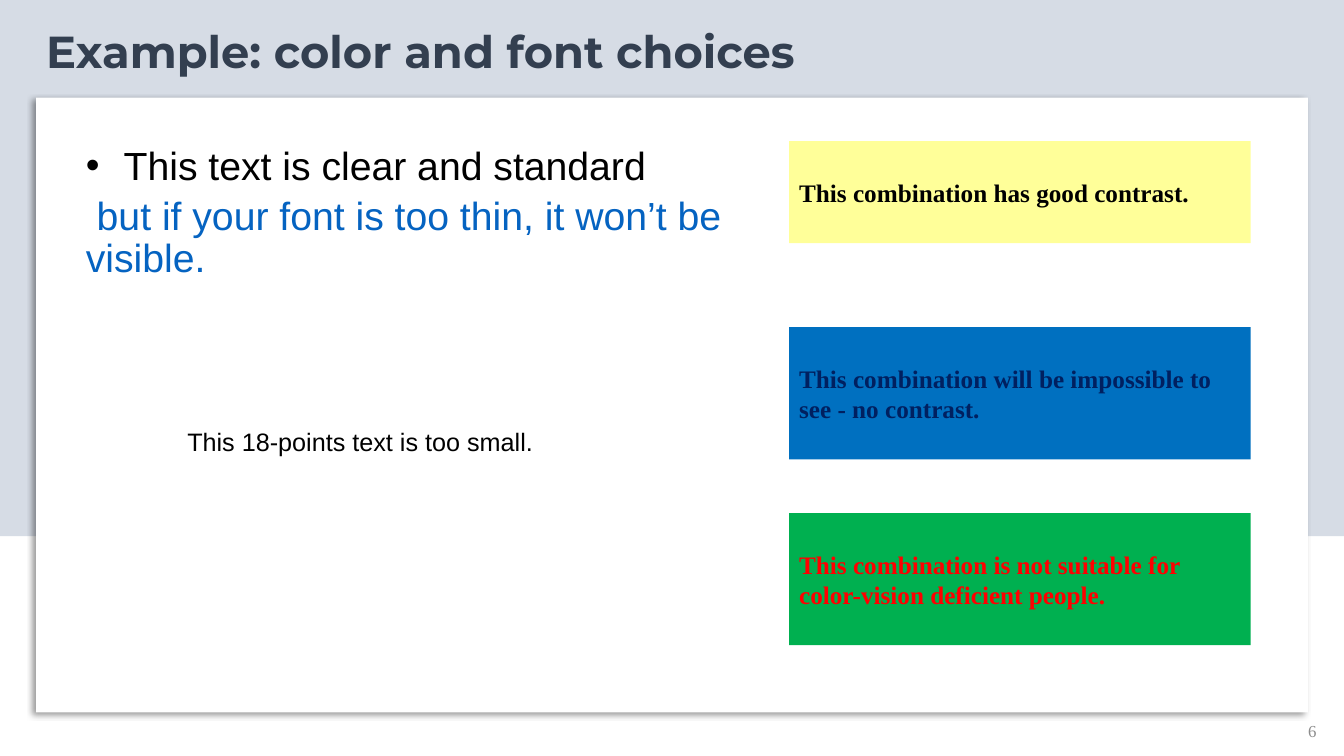
from lxml.etree import SubElement
from pptx import Presentation
from pptx.dml.color import RGBColor
from pptx.enum.shapes import MSO_SHAPE as Shape
from pptx.enum.text import MSO_ANCHOR as Anchor, MSO_AUTO_SIZE as Fit, PP_ALIGN as Align
from pptx.oxml.ns import qn
from pptx.util import Cm, Pt

WHITE = RGBColor(0xFF, 0xFF, 0xFF)
BLACK = RGBColor(0x00, 0x00, 0x00)
MIST = RGBColor(0xD6, 0xDC, 0xE5)
SLATE = RGBColor(0x33, 0x3F, 0x50)
GREY = RGBColor(0x8C, 0x8C, 0x8C)
LINK = RGBColor(0x05, 0x63, 0xC1)
YELLOW = RGBColor(0xFF, 0xFF, 0x99)
BLUE = RGBColor(0x00, 0x70, 0xC0)
NAVY = RGBColor(0x00, 0x20, 0x60)
GREEN = RGBColor(0x00, 0xB0, 0x50)
RED = RGBColor(0xFF, 0x00, 0x00)

SAMPLES = [
    ("This combination has good contrast.", YELLOW, BLACK, 2.57),
    ("This combination will be impossible to see - no contrast.", BLUE, NAVY, 3.33),
    ("This combination is not suitable for color-vision deficient people.", GREEN, RED, 3.33),
]


def style(item, looks):
    """Set each attribute in looks on the item."""
    for name, value in looks.items():
        setattr(item, name, value)


def place(item, box):
    """Move the item to a box given in centimetres."""
    style(item, dict(zip(("left", "top", "width", "height"), map(Cm, box))))


def write(para, text, color, looks):
    """Add a run of styled text to the paragraph."""
    run = para.add_run()
    run.text = text
    style(run.font, looks)
    run.font.color.rgb = color


def panel(slide, box, color):
    """Draw a plain filled rectangle."""
    rect = slide.shapes.add_shape(Shape.RECTANGLE, *map(Cm, box))
    rect.fill.solid()
    rect.fill.fore_color.rgb = color
    rect.line.fill.background()
    rect.shadow.inherit = False
    return rect


def backdrop(slide, box):
    """Draw the tinted band and the white card with its shadow."""
    left, top, width, height = box
    panel(slide, (left, top, width, 13.51), MIST)
    card = panel(slide, (left + 0.91, top + 2.46, width - 1.82, height - 3.56), WHITE)
    effects = card._element.spPr.find(qn("a:effectLst"))
    shade = SubElement(effects, qn("a:outerShdw"), blurRad=str(Pt(4)), dist=str(Pt(3)),
                       dir="8100000", algn="tr", rotWithShape="0")
    tint = SubElement(shade, qn("a:srgbClr"), val="000000")
    SubElement(tint, qn("a:alpha"), val="40000")


def heading(slide, box):
    """Fill the title placeholder and lift it above the backdrop."""
    title = slide.shapes.title
    place(title, box)
    slide.shapes._spTree.append(title._element)
    style(title.text_frame, {"word_wrap": False, "auto_size": Fit.NONE,
                             "vertical_anchor": Anchor.TOP})
    para = title.text_frame.paragraphs[0]
    para.alignment = Align.LEFT
    write(para, "Example: color and font choices", SLATE,
          {"name": "Montserrat", "size": Pt(32), "bold": True})


def points(slide, box):
    """Fill the body placeholder with the bullet and its plain follow-up."""
    body = slide.placeholders[1]
    place(body, box)
    slide.shapes._spTree.append(body._element)
    frame = body.text_frame
    style(frame, {"word_wrap": True, "auto_size": Fit.NONE, "vertical_anchor": Anchor.TOP})
    looks = {"name": "Arial", "size": Pt(28)}
    first, second = frame.paragraphs[0], frame.add_paragraph()
    for para in (first, second):
        style(para, {"line_spacing": 0.9, "space_before": Pt(5.6)})
    write(first, "This text is clear and standard", BLACK, looks)
    write(second, " but if your font is too thin, it won’t be visible.", LINK, looks)
    props = second._p.get_or_add_pPr()
    props.set("marL", "0")
    props.set("indent", "0")
    SubElement(props, qn("a:buNone"))


def label(slide, box, text, color, looks, align=Align.LEFT, anchor=Anchor.TOP):
    """Add one line of text in a text box."""
    frame = slide.shapes.add_textbox(*map(Cm, box)).text_frame
    style(frame, {"word_wrap": True, "vertical_anchor": anchor})
    para = frame.paragraphs[0]
    para.alignment = align
    write(para, text, color, looks)
    return para


def samples(slide, box):
    """Stack the colour samples at an even pitch down the box."""
    left, top, width, height = box
    pitch = (height - SAMPLES[-1][3]) / (len(SAMPLES) - 1)
    for row, (text, fill, ink, tall) in enumerate(SAMPLES):
        rect = panel(slide, (left, top + row * pitch, width, tall), fill)
        style(rect.text_frame, {"word_wrap": True, "vertical_anchor": Anchor.MIDDLE})
        para = rect.text_frame.paragraphs[0]
        para.alignment = Align.LEFT
        write(para, text, ink, {"name": "Times New Roman", "size": Pt(18), "bold": True})


def main():
    """Build the slide and save it."""
    deck = Presentation()
    style(deck, {"slide_width": Cm(33.87), "slide_height": Cm(19.05)})
    slide = deck.slides.add_slide(deck.slide_layouts[1])
    backdrop(slide, (0, 0, 33.87, 19.05))
    heading(slide, (0.91, 0.46, 20.45, 1.63))
    points(slide, (1.91, 3.56, 16.76, 5.59))
    note = label(slide, (4.47, 10.62, 9.91, 1.19), "This 18-points text is too small.",
                 BLACK, {"name": "Arial", "size": Pt(18)})
    note.space_before = Pt(3.6)
    samples(slide, (19.89, 3.56, 11.63, 12.7))
    label(slide, (25.81, 17.91, 7.62, 1.02), "6", GREY,
          {"name": "Times New Roman", "size": Pt(12)}, Align.RIGHT, Anchor.MIDDLE)
    deck.save("out.pptx")


if __name__ == "__main__":
    main()
